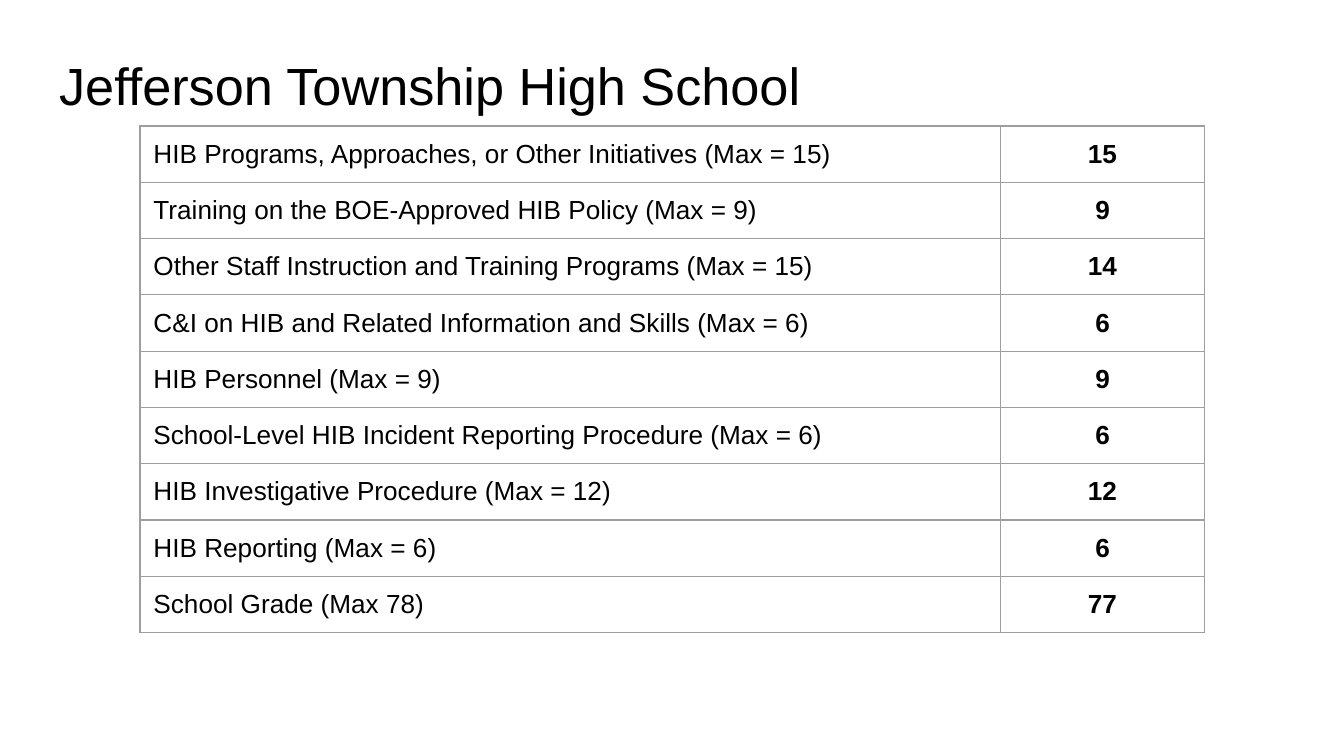
from lxml import etree
from pptx import Presentation
from pptx.dml.color import RGBColor
from pptx.enum.text import MSO_ANCHOR, MSO_AUTO_SIZE, PP_ALIGN
from pptx.oxml.ns import qn
from pptx.util import Pt

BLACK = RGBColor(0x00, 0x00, 0x00)
GRAY = RGBColor(0x9E, 0x9E, 0x9E)
LEFT, CENTER = PP_ALIGN.LEFT, PP_ALIGN.CENTER
TOP = MSO_ANCHOR.TOP
NO_AUTOFIT = MSO_AUTO_SIZE.NONE
TITLE_ONLY = 5

SCORES = [
    ("HIB Programs, Approaches, or Other Initiatives (Max = 15)", 15),
    ("Training on the BOE-Approved HIB Policy (Max = 9)", 9),
    ("Other Staff Instruction and Training Programs (Max = 15)", 14),
    ("C&I on HIB and Related Information and Skills (Max = 6)", 6),
    ("HIB Personnel (Max = 9)", 9),
    ("School-Level HIB Incident Reporting Procedure (Max = 6)", 6),
    ("HIB Investigative Procedure (Max = 12)", 12),
    ("HIB Reporting (Max = 6)", 6),
    ("School Grade (Max 78)", 77),
]


class SlideBuilder:
    """Holds the text style and the slide being filled."""

    font = "Arial"
    inset = 7.2
    border_width = 0.75

    def __init__(self, prs):
        self.s = prs.slides.add_slide(prs.slide_layouts[TITLE_ONLY])

    def format(self, p, size, align=LEFT, bold=False):
        p.alignment = align
        p.font.name = self.font
        p.font.size = Pt(size)
        p.font.bold = bold
        p.font.color.rgb = BLACK

    def title(self, text, x, y, w, h):
        sp = self.s.shapes.title
        sp.left, sp.top, sp.width, sp.height = Pt(x), Pt(y), Pt(w), Pt(h)
        tf = sp.text_frame
        tf.text = text
        tf.word_wrap = True
        tf.auto_size = NO_AUTOFIT
        tf.vertical_anchor = TOP
        tf.margin_left = tf.margin_right = Pt(self.inset)
        tf.margin_top = Pt(10)
        self.format(tf.paragraphs[0], 28)

    def borders(self, cell):
        tcPr = cell._tc.get_or_add_tcPr()
        for side in ("lnL", "lnR", "lnT", "lnB"):
            ln = etree.SubElement(tcPr, qn(f"a:{side}"), w=str(Pt(self.border_width)))
            fill = etree.SubElement(ln, qn("a:solidFill"))
            etree.SubElement(fill, qn("a:srgbClr"), val=str(GRAY))

    def cell(self, cell, text, align, bold):
        cell.text = text
        cell.margin_left = cell.margin_right = Pt(self.inset)
        cell.margin_top = cell.margin_bottom = Pt(self.inset)
        cell.vertical_anchor = TOP
        self.borders(cell)
        cell.fill.background()
        self.format(cell.text_frame.paragraphs[0], 14, align, bold)

    def score_table(self, rows, x, y, widths, row_height):
        frame = self.s.shapes.add_table(
            len(rows), len(widths), Pt(x), Pt(y),
            Pt(sum(widths)), Pt(row_height * len(rows)))
        table = frame.table
        table.first_row = table.horz_banding = False
        for column, width in zip(table.columns, widths):
            column.width = Pt(width)
        for i, (label, score) in enumerate(rows):
            table.rows[i].height = Pt(row_height)
            self.cell(table.cell(i, 0), label, LEFT, False)
            self.cell(table.cell(i, 1), str(score), CENTER, True)


def main():
    prs = Presentation()
    prs.slide_width, prs.slide_height = Pt(720), Pt(405)
    slide = SlideBuilder(prs)
    slide.title("Jefferson Township High School", 24.5, 18.7, 671, 41)
    slide.score_table(SCORES, 75, 67.5, (461, 109.25), 30)
    prs.save("out.pptx")


if __name__ == "__main__":
    main()
